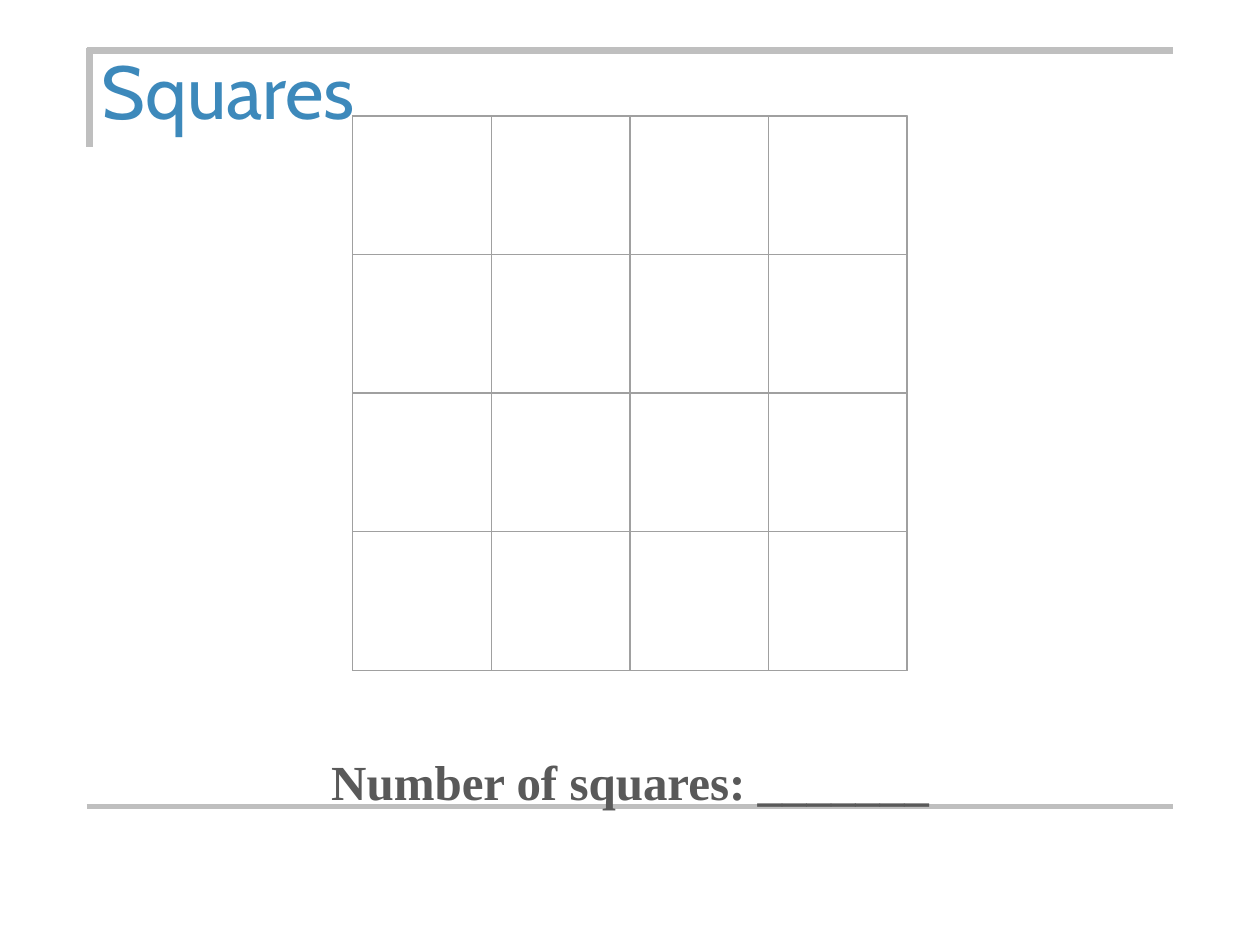
from lxml.etree import SubElement
from pptx import Presentation
from pptx.dml.color import RGBColor
from pptx.enum.shapes import MSO_CONNECTOR as Conn, MSO_SHAPE as Shape
from pptx.enum.text import MSO_ANCHOR as Anchor, PP_ALIGN as Align
from pptx.oxml.ns import qn
from pptx.util import Inches, Pt

RULE = RGBColor(0xBF, 0xBF, 0xBF)
GRID = RGBColor(0xA0, 0xA0, 0xA0)
BLUE = RGBColor(0x3D, 0x89, 0xBB)
GRAY = RGBColor(0x59, 0x59, 0x59)
COUNT = 4
SIDE = 1.1
LEFT = 2.8
TOP = 0.92


def add_rule(slide, x1, y1, x2, y2, width):
    rule = slide.shapes.add_connector(
        Conn.STRAIGHT, Inches(x1), Inches(y1), Inches(x2), Inches(y2))
    rule.line.color.rgb = RULE
    rule.line.width = Pt(width)
    SubElement(rule._element.spPr, qn("a:effectLst"))


def add_square(group, x, y, side, width):
    square = group.shapes.add_shape(
        Shape.RECTANGLE, Inches(x), Inches(y), Inches(side), Inches(side))
    square.shadow.inherit = False
    square.fill.background()
    square.line.color.rgb = GRID
    square.line.width = Pt(width)


def add_grid(slide):
    group = slide.shapes.add_group_shape()
    for row in range(COUNT):
        for col in range(COUNT):
            add_square(group, LEFT + col * SIDE, TOP + row * SIDE, SIDE, 0)
    add_square(group, LEFT, TOP, COUNT * SIDE, 0.75)


def add_text(slide, text, x, y, w, h, font, size, color, anchor):
    box = slide.shapes.add_textbox(Inches(x), Inches(y), Inches(w), Inches(h))
    frame = box.text_frame
    frame.word_wrap = True
    frame.vertical_anchor = anchor
    frame.text = text
    run = frame.paragraphs[0].runs[0]
    run.font.name = font
    run.font.size = Pt(size)
    run.font.color.rgb = color
    return frame


def add_title(slide):
    frame = add_text(slide, "Squares", 0.71, 0.38, 8, 0.75,
                     "Cabin", 42.9, BLUE, Anchor.MIDDLE)
    frame.paragraphs[0].line_spacing = 0.9


def add_prompt(slide):
    frame = add_text(slide, "Number of squares: _______", 1.29, 5.5, 7.42, 0.93,
                     "Times New Roman", 28, GRAY, Anchor.BOTTOM)
    frame.margin_left = frame.margin_right = 0
    frame.margin_top = frame.margin_bottom = 0
    line = frame.paragraphs[0]
    line.alignment = Align.CENTER
    line.runs[0].font.bold = True


def main():
    deck = Presentation()
    deck.slide_width = Inches(10)
    deck.slide_height = Inches(7.5)
    slide = deck.slides.add_slide(deck.slide_layouts[6])
    add_rule(slide, 0.69, 6.4, 9.31, 6.4, 3)
    add_rule(slide, 0.69, 0.4, 9.31, 0.4, 3.75)
    add_rule(slide, 0.71, 0.38, 0.71, 1.17, 3.75)
    add_grid(slide)
    add_prompt(slide)
    add_title(slide)
    deck.save("out.pptx")


if __name__ == "__main__":
    main()
